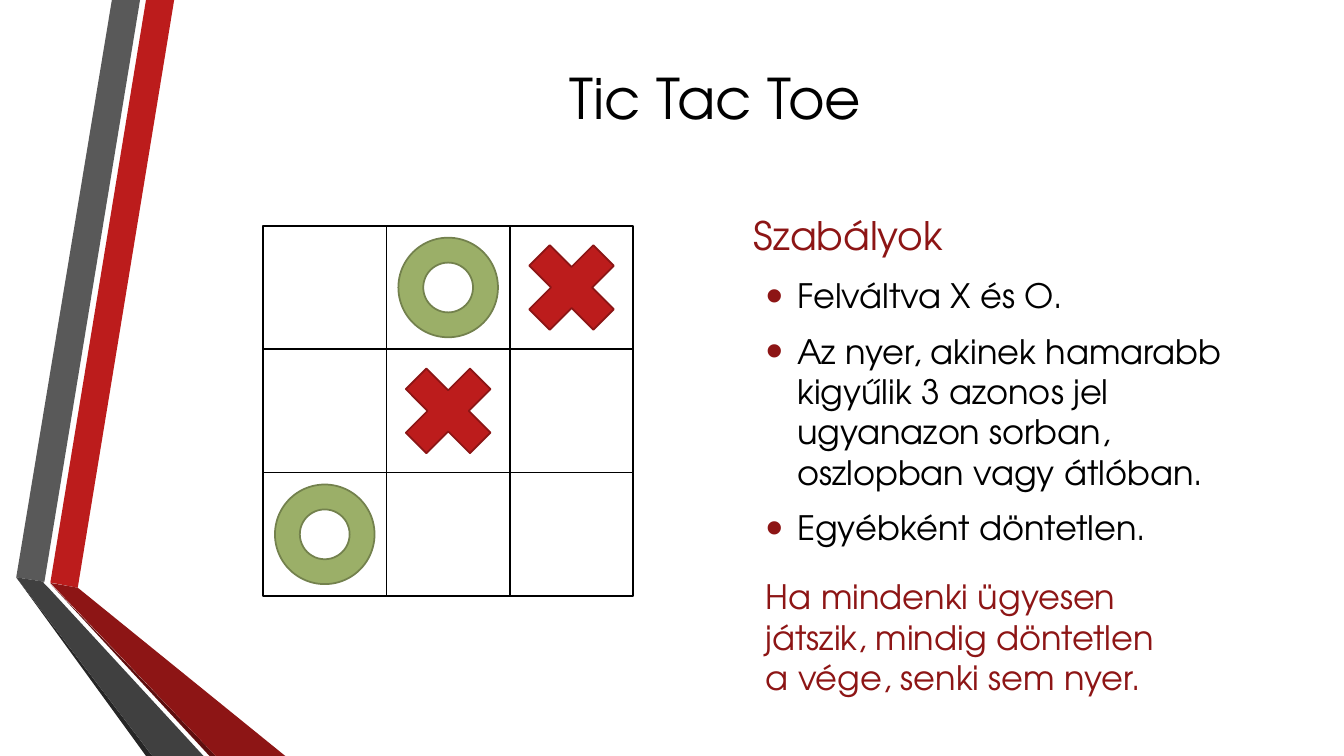
from lxml import etree
from pptx import Presentation
from pptx.dml.color import RGBColor
from pptx.enum.shapes import MSO_SHAPE
from pptx.enum.text import MSO_ANCHOR, PP_ALIGN
from pptx.oxml.ns import qn
from pptx.util import Cm, Pt

CROSS, RING, SQUARE = MSO_SHAPE.MATH_MULTIPLY, MSO_SHAPE.DONUT, MSO_SHAPE.RECTANGLE
TOP, MIDDLE, BOTTOM = MSO_ANCHOR.TOP, MSO_ANCHOR.MIDDLE, MSO_ANCHOR.BOTTOM
LEFT, CENTER = PP_ALIGN.LEFT, PP_ALIGN.CENTER

BLACK = RGBColor(0x00, 0x00, 0x00)
WHITE = RGBColor(0xFF, 0xFF, 0xFF)
RED = RGBColor(0xBC, 0x1C, 0x1C)
RED_EDGE = RGBColor(0x8B, 0x15, 0x15)
DARK_RED = RGBColor(0x8D, 0x15, 0x15)
DEEP_RED = RGBColor(0x5E, 0x0E, 0x0E)
GREEN = RGBColor(0x9B, 0xAF, 0x68)
GREEN_EDGE = RGBColor(0x73, 0x81, 0x4D)
GRAY = RGBColor(0x59, 0x59, 0x59)
DARK_GRAY = RGBColor(0x40, 0x40, 0x40)
DEEP_GRAY = RGBColor(0x26, 0x26, 0x26)

FONT = "TeX Gyre Adventor"
BULLET_INDENT = Cm(0.79)

RIBBONS = [
    (RED, [(127, 1468), (196, 1481), (439, 0), (368, 0)]),
    (GRAY, [(353, 0), (282, 0), (41, 1455), (112, 1466)]),
    (DEEP_GRAY, [(41, 1455), (368, 1905), (384, 1905)]),
    (DEEP_RED, [(127, 1471), (528, 1905), (544, 1905)]),
    (DARK_RED, [(127, 1469), (544, 1905), (719, 1905), (196, 1481)]),
    (DARK_GRAY, [(513, 1905), (122, 1481), (109, 1468), (112, 1466),
                 (41, 1455), (384, 1905)]),
]

BOARD = [" OX", " X ", "O  "]
MARKS = {
    "X": (CROSS, RED, RED_EDGE, 0),
    "O": (RING, GREEN, GREEN_EDGE, 0.3),
}

RULES = [
    "Felváltva X és O.",
    "Az nyer, akinek hamarabb kigyűlik 3 azonos jel ugyanazon sorban, "
    "oszlopban vagy átlóban.",
    "Egyébként döntetlen.",
]


def add_ribbons(slide, left, top):
    for color, points in RIBBONS:
        builder = slide.shapes.build_freeform(*points[0], scale=Cm(0.01))
        builder.add_line_segments(points[1:], close=True)
        shape = builder.convert_to_shape(left, top)
        shape.shadow.inherit = False
        shape.fill.solid()
        shape.fill.fore_color.rgb = color
        shape.line.fill.background()


def add_bullet(paragraph):
    properties = paragraph._p.get_or_add_pPr()
    properties.set("marL", str(BULLET_INDENT))
    properties.set("indent", str(-BULLET_INDENT))
    color = etree.SubElement(properties, qn("a:buClr"))
    etree.SubElement(color, qn("a:srgbClr"), val=str(DARK_RED))
    etree.SubElement(properties, qn("a:buSzPct"), val="145000")
    etree.SubElement(properties, qn("a:buFont"), typeface="Arial")
    etree.SubElement(properties, qn("a:buChar"), char="•")


def add_text(slide, box, texts, size, color, anchor=TOP, alignment=LEFT,
             spaced=False, bulleted=False):
    frame = slide.shapes.add_textbox(*box).text_frame
    frame.word_wrap = True
    frame.vertical_anchor = anchor
    for index, text in enumerate(texts):
        paragraph = frame.add_paragraph() if index else frame.paragraphs[0]
        paragraph.alignment = alignment
        if spaced:
            paragraph.space_before = Pt(size * 0.2)
            paragraph.space_after = Pt(6)
        if bulleted:
            add_bullet(paragraph)
        run = paragraph.add_run()
        run.text = text
        run.font.name = FONT
        run.font.size = Pt(size)
        run.font.color.rgb = color


def add_outlined_shape(slide, kind, box, fill, edge):
    shape = slide.shapes.add_shape(kind, *box)
    shape.shadow.inherit = False
    shape.fill.solid()
    shape.fill.fore_color.rgb = fill
    shape.line.color.rgb = edge
    shape.line.width = Pt(1.25)


def add_board(slide, left, top, size):
    cell = size // len(BOARD)
    for row, marks in enumerate(BOARD):
        for column, mark in enumerate(marks):
            x, y = left + column * cell, top + row * cell
            add_outlined_shape(slide, SQUARE, (x, y, cell, cell), WHITE, BLACK)
            if mark in MARKS:
                kind, fill, edge, inset = MARKS[mark]
                margin = Cm(inset)
                side = cell - 2 * margin
                add_outlined_shape(slide, kind, (x + margin, y + margin, side, side),
                                   fill, edge)


def add_rules(slide, left, top, width):
    indent = Cm(0.3)
    add_text(slide, (left, top, Cm(12.85), Cm(1.6)), ["Szabályok"], 28, DARK_RED,
             anchor=BOTTOM, spaced=True)
    add_text(slide, (left + indent, top + Cm(1.78), width - indent, Cm(7.32)),
             RULES, 24, BLACK, spaced=True, bulleted=True)
    add_text(slide, (left + indent, top + Cm(9.37), Cm(10.92), Cm(3.33)),
             ["Ha mindenki ügyesen játszik, mindig döntetlen a vége, "
              "senki sem nyer."], 24, DARK_RED)


def main():
    presentation = Presentation()
    presentation.slide_width = Cm(33.87)
    presentation.slide_height = Cm(19.05)
    slide = presentation.slides.add_slide(presentation.slide_layouts[6])
    add_ribbons(slide, Cm(0), Cm(0))
    add_text(slide, (Cm(4.11), Cm(0), Cm(27.84), Cm(4.88)), ["Tic Tac Toe"], 40,
             BLACK, anchor=MIDDLE, alignment=CENTER)
    add_rules(slide, Cm(18.75), Cm(5.03), Cm(13.89))
    add_board(slide, Cm(6.63), Cm(5.69), Cm(9.33))
    presentation.save("out.pptx")


if __name__ == "__main__":
    main()
